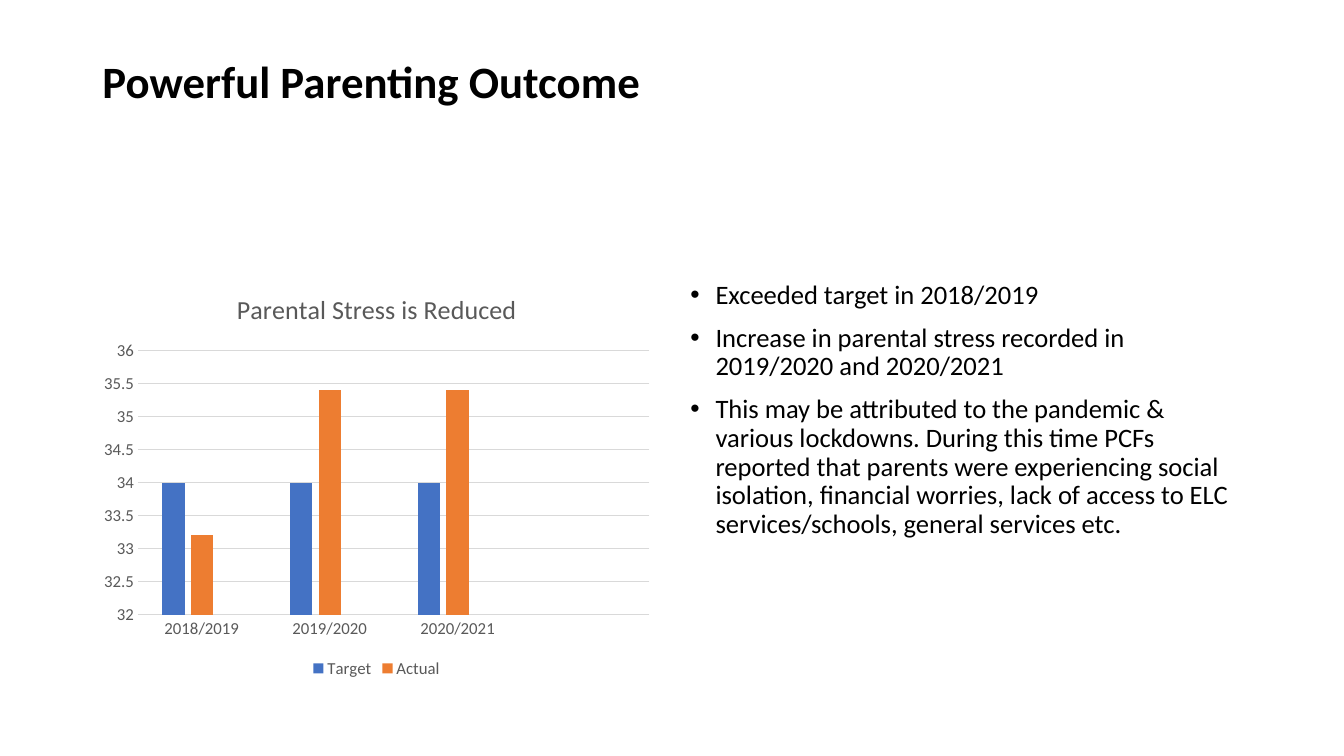
from lxml.etree import SubElement
from pptx import Presentation
from pptx.chart.data import CategoryChartData
from pptx.dml.color import RGBColor
from pptx.enum.chart import XL_CHART_TYPE as Kind, XL_LEGEND_POSITION as Spot, XL_TICK_MARK as Tick
from pptx.enum.text import MSO_ANCHOR as Anchor, PP_ALIGN as Align
from pptx.oxml import parse_xml
from pptx.oxml.ns import nsdecls, qn
from pptx.util import Pt

COLORS = {k: RGBColor.from_string(v) for k, v in {
    "text": "000000", "label": "595959", "grid": "D9D9D9",
    "Target": "4472C4", "Actual": "ED7D31", "Series 3": "A5A5A5"}.items()}
FONT = "Calibri"


def write(frame, lines, size, bold=False, bullet=False, space=0):
    frame.word_wrap = True
    for i, line in enumerate(lines):
        para = frame.paragraphs[0] if i == 0 else frame.add_paragraph()
        para.alignment = Align.LEFT
        para.line_spacing = 0.9
        para.space_before = Pt(space)
        run = para.add_run()
        run.text = line
        font = run.font
        font.name, font.size, font.bold = FONT, Pt(size), bold
        font.color.rgb = COLORS["text"]
        if bullet:
            props = para._p.get_or_add_pPr()
            props.set("marL", str(Pt(18)))
            props.set("indent", str(-Pt(18)))
            SubElement(props, qn("a:buFont")).set("typeface", "Arial")
            SubElement(props, qn("a:buChar")).set("char", "•")


def layout(target="", **spots):
    """Return a manual chart layout, in fractions of the chart area."""
    inner = f'<c:layoutTarget val="{target}"/>' if target else ""
    inner += "".join(f'<c:{k}Mode val="edge"/>' for k in "xy")
    inner += "".join(f'<c:{k} val="{v}"/>' for k, v in spots.items())
    return parse_xml(f'<c:layout {nsdecls("c")}><c:manualLayout>{inner}'
                     '</c:manualLayout></c:layout>')


deck = Presentation()
deck.slide_width, deck.slide_height = Pt(960), Pt(540)
slide = deck.slides.add_slide(deck.slide_layouts[5])

# Title
title = slide.shapes.title
title.left, title.top, title.width, title.height = Pt(66), Pt(26), Pt(828), Pt(104)
frame = title.text_frame
frame.vertical_anchor = Anchor.MIDDLE
frame.margin_bottom = Pt(40)
write(frame, ["Powerful Parenting Outcome"], 32, bold=True)

# Findings
body = slide.shapes.add_textbox(Pt(486), Pt(197.5), Pt(408), Pt(290))
write(body.text_frame, [
    "Exceeded target in 2018/2019",
    "Increase in parental stress recorded in 2019/2020 and 2020/2021",
    "This may be attributed to the pandemic & various lockdowns. During this time "
    "PCFs reported that parents were experiencing social isolation, financial "
    "worries, lack of access to ELC services/schools, general services etc.",
], 19, bullet=True, space=10)

# Stress chart, with one empty year and one empty series
data = CategoryChartData()
data.categories = ["2018/2019", "2019/2020", "2020/2021", ""]
data.add_series("Target", [34, 34, 34, None])
data.add_series("Actual", [33.2, 35.4, 35.4, None])
data.add_series("Series 3", [None] * 4)
chart = slide.shapes.add_chart(Kind.COLUMN_CLUSTERED, Pt(66), Pt(197.5),
                               Pt(406), Pt(290), data).chart
chart.font.name, chart.font.size = FONT, Pt(12)
chart.font.color.rgb = COLORS["label"]

chart.has_title = True
head = chart.chart_title
head.text_frame.text = "Parental Stress is Reduced"
font = head.text_frame.paragraphs[0].runs[0].font
font.name, font.size, font.bold = FONT, Pt(18.6), False
font.color.rgb = COLORS["label"]
for old in head._element.findall(qn("c:layout")):
    head._element.remove(old)
head._element.find(qn("c:tx")).addnext(layout(x=0.246, y=0.025))

plot = chart.plots[0]
plot.gap_width, plot.overlap = 219, -27
plot.vary_by_categories = False
for series in plot.series:
    series.format.fill.solid()
    series.format.fill.fore_color.rgb = COLORS[series.name]
area = chart._chartSpace.chart.plotArea
for old in area.findall(qn("c:layout")):
    area.remove(old)
area.insert(0, layout("inner", x=0.08, y=0.183, w=0.9, h=0.65))

years, score = chart.category_axis, chart.value_axis
for axis in (years, score):
    axis.major_tick_mark = axis.minor_tick_mark = Tick.NONE
score.minimum_scale, score.maximum_scale, score.major_unit = 32, 36, 0.5
score.format.line.fill.background()
for line in (years.format.line, score.major_gridlines.format.line):
    line.color.rgb = COLORS["grid"]
    line.width = Pt(0.75)

chart.has_legend = True
legend = chart.legend
legend.position = Spot.BOTTOM
legend.include_in_layout = False
legend._element.find(qn("c:legendPos")).addnext(parse_xml(
    f'<c:legendEntry {nsdecls("c")}><c:idx val="2"/><c:delete val="1"/></c:legendEntry>'))

deck.save("out.pptx")
